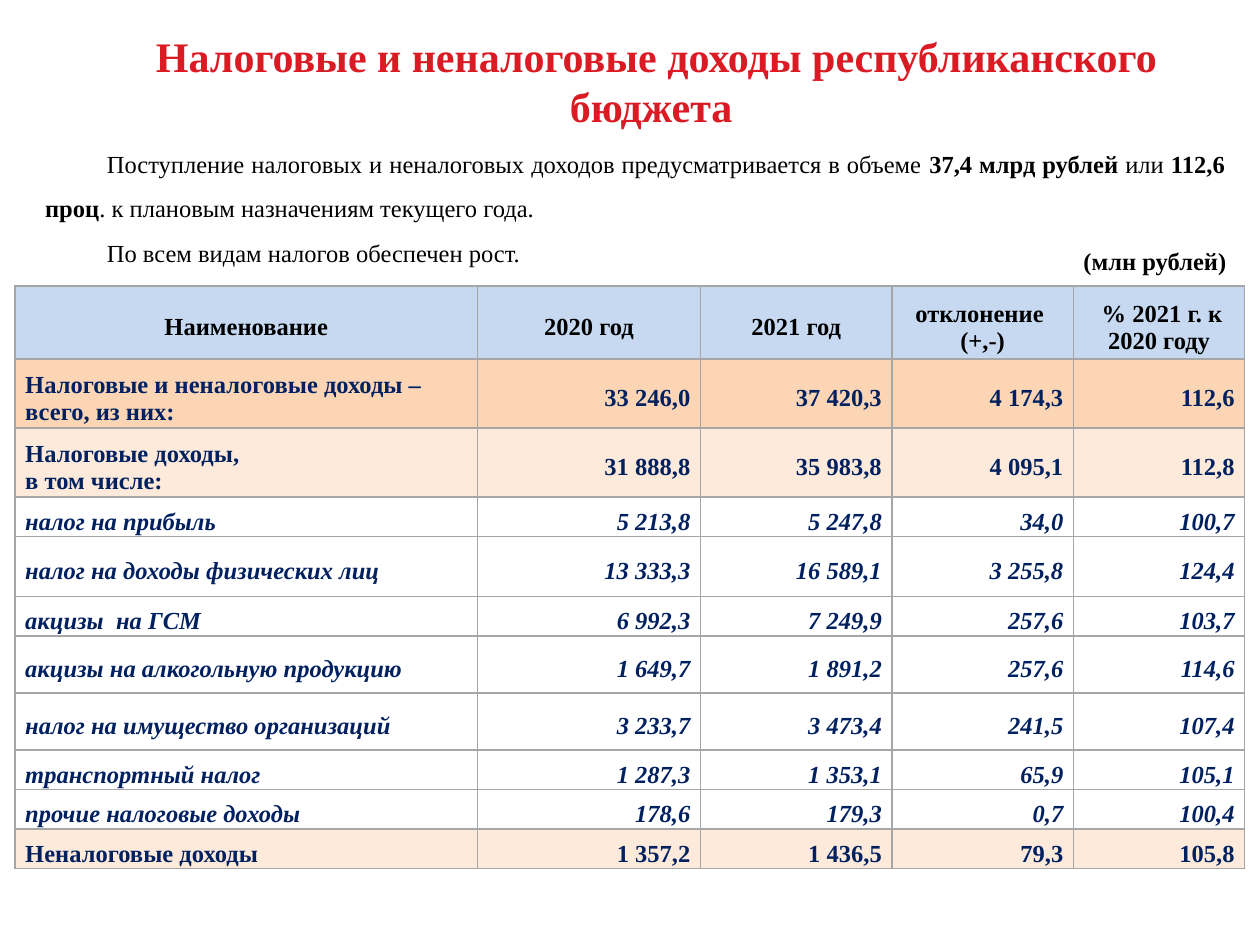
from lxml import etree
from pptx import Presentation
from pptx.dml.color import RGBColor
from pptx.enum.text import MSO_ANCHOR, MSO_AUTO_SIZE, PP_ALIGN
from pptx.oxml.ns import qn
from pptx.util import Inches, Pt

LEFT, CENTER, RIGHT, JUSTIFY = PP_ALIGN.LEFT, PP_ALIGN.CENTER, PP_ALIGN.RIGHT, PP_ALIGN.JUSTIFY
TOP, MIDDLE = MSO_ANCHOR.TOP, MSO_ANCHOR.MIDDLE
NO_AUTOFIT = MSO_AUTO_SIZE.NONE
TITLE_ONLY = 5
FONT = "Times New Roman"
GRID_COLUMNS, GRID_ROWS = 100, 75
COLORS = {
    "title": "DA1B23", "text": "000000", "figures": "002060", "border": "A6A6A6",
    "header": "C6D9F1", "total": "FCD5B5", "group": "FDEADA",
}
ROW_STYLES = {
    "header": {"fill": "header", "color": "text", "italic": False},
    "total": {"fill": "total", "color": "figures", "italic": False},
    "group": {"fill": "group", "color": "figures", "italic": False},
    "item": {"fill": None, "color": "figures", "italic": True},
}
COLUMN_WIDTHS = [36.7, 17.7, 15.2, 14.4, 13.6]
REVENUE_ROWS = [
    ("header", 5.8, ["Наименование", "2020 год", "2021 год", "отклонение \n(+,-)", " % 2021 г. к 2020 году"]),
    ("total", 5.47, ["Налоговые и неналоговые доходы – всего, из них:", "33 246,0", "37 420,3", "4 174,3", "112,6"]),
    ("group", 5.47, ["Налоговые доходы,\nв том числе:", "31 888,8", "35 983,8", "4 095,1", "112,8"]),
    ("item", 3.12, ["налог на прибыль", "5 213,8", "5 247,8", "34,0", "100,7"]),
    ("item", 4.75, ["налог на доходы физических лиц", "13 333,3", "16 589,1", "3 255,8", "124,4"]),
    ("item", 3.12, ["акцизы  на ГСМ", "6 992,3", "7 249,9", "257,6", "103,7"]),
    ("item", 4.53, ["акцизы на алкогольную продукцию", "1 649,7", "1 891,2", "257,6", "114,6"]),
    ("item", 4.53, ["налог на имущество организаций", "3 233,7", "3 473,4", "241,5", "107,4"]),
    ("item", 3.12, ["транспортный налог", "1 287,3", "1 353,1", "65,9", "105,1"]),
    ("item", 3.12, ["прочие налоговые доходы", "178,6", "179,3", "0,7", "100,4"]),
    ("group", 3.12, ["Неналоговые доходы", "1 357,2", "1 436,5", "79,3", "105,8"]),
]
SUMMARY = [
    [("Поступление налоговых и неналоговых доходов предусматривается в объеме ", False),
     ("37,4 млрд рублей", True), (" или ", False), ("112,6 проц", True),
     (". к плановым назначениям текущего года. ", False)],
    [("По всем видам налогов обеспечен рост.", False)],
]


def add_run(paragraph, text, size=14, color="text", bold=True, italic=False):
    run = paragraph.add_run()
    run.text = text
    run.font.name = FONT
    run.font.size = Pt(size)
    run.font.bold = bold
    run.font.italic = italic
    run.font.color.rgb = RGBColor.from_string(COLORS[color])


def write_text(frame, text, align=LEFT, **font):
    for index, line in enumerate(text.split("\n")):
        paragraph = frame.add_paragraph() if index else frame.paragraphs[0]
        paragraph.alignment = align
        add_run(paragraph, line, **font)


class SlideBuilder:
    def __init__(self, presentation):
        self.column = presentation.slide_width / GRID_COLUMNS
        self.row = presentation.slide_height / GRID_ROWS
        self.slide = presentation.slides.add_slide(presentation.slide_layouts[TITLE_ONLY])

    def place(self, left, top, width, height):
        return (int(left * self.column), int(top * self.row),
                int(width * self.column), int(height * self.row))

    def title(self, text, *area):
        shape = self.slide.shapes.title
        shape.left, shape.top, shape.width, shape.height = self.place(*area)
        frame = shape.text_frame
        frame.auto_size = NO_AUTOFIT
        frame.vertical_anchor = TOP
        write_text(frame, text, CENTER, size=24, color="title")

    def text_frame(self, *area):
        frame = self.slide.shapes.add_textbox(*self.place(*area)).text_frame
        frame.word_wrap = True
        return frame

    def label(self, text, *area):
        frame = self.text_frame(*area)
        frame.word_wrap = False
        write_text(frame, text)

    def summary(self, paragraphs, *area):
        frame = self.text_frame(*area)
        for index, runs in enumerate(paragraphs):
            paragraph = frame.add_paragraph() if index else frame.paragraphs[0]
            paragraph.alignment = JUSTIFY
            paragraph.line_spacing = 1.5
            properties = paragraph._p.get_or_add_pPr()
            properties.set("marL", "0")
            properties.set("indent", str(Inches(0.49)))
            for text, bold in runs:
                add_run(paragraph, text, bold=bold)
        paragraph.space_after = Pt(6)

    def borders(self, cell):
        properties = cell._tc.get_or_add_tcPr()
        for side in ("a:lnL", "a:lnR", "a:lnT", "a:lnB"):
            line = etree.SubElement(properties, qn(side), w=str(Pt(1)))
            fill = etree.SubElement(line, qn("a:solidFill"))
            etree.SubElement(fill, qn("a:srgbClr"), val=COLORS["border"])

    def cell(self, cell, text, align, fill, **font):
        cell.margin_left = cell.margin_right = cell.margin_top = Inches(0.08)
        cell.margin_bottom = 0
        cell.vertical_anchor = MIDDLE
        self.borders(cell)
        if fill:
            cell.fill.solid()
            cell.fill.fore_color.rgb = RGBColor.from_string(COLORS[fill])
        else:
            cell.fill.background()
        write_text(cell.text_frame, text, align, **font)

    def table(self, rows, widths, left, top):
        height = sum(row_height for _, row_height, _ in rows)
        area = self.place(left, top, sum(widths), height)
        table = self.slide.shapes.add_table(len(rows), len(widths), *area).table
        table.first_row = table.horz_banding = False
        for column, width in zip(table.columns, widths):
            column.width = int(width * self.column)
        for row, (kind, row_height, texts) in zip(table.rows, rows):
            row.height = int(row_height * self.row)
            for index, (cell, text) in enumerate(zip(row.cells, texts)):
                align = CENTER if kind == "header" else RIGHT if index else LEFT
                self.cell(cell, text, align, **ROW_STYLES[kind])


def main():
    presentation = Presentation()
    presentation.slide_width, presentation.slide_height = Inches(10), Inches(7.5)
    builder = SlideBuilder(presentation)
    builder.title("Налоговые и неналоговые доходы республиканского бюджета ", 7.6, 1.9, 89, 9.1)
    builder.label("(млн рублей)", 85, 19, 13.8, 3.4)
    builder.table(REVENUE_ROWS, COLUMN_WIDTHS, 1.2, 22.7)
    builder.summary(SUMMARY, 2.6, 10.2, 95.6, 11.6)
    presentation.save("out.pptx")


if __name__ == "__main__":
    main()
